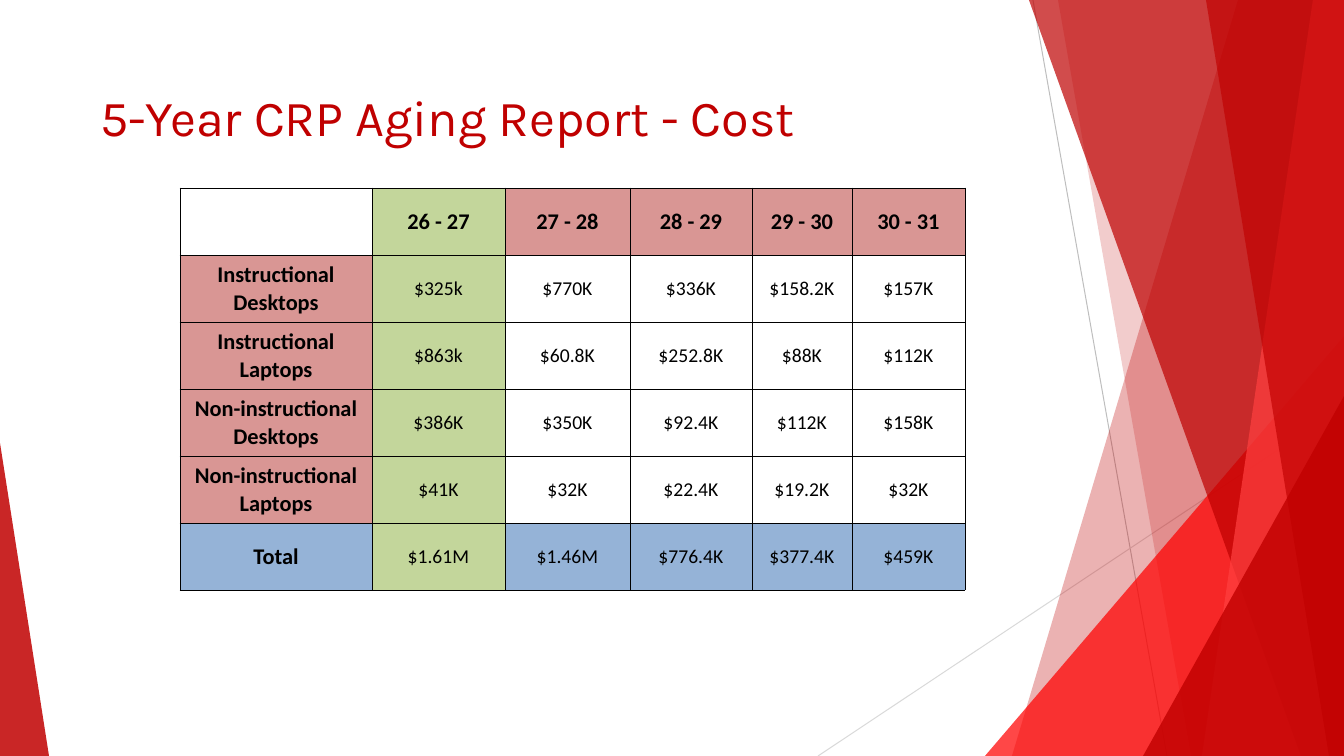
from lxml import etree
from pptx import Presentation
from pptx.dml.color import RGBColor
from pptx.enum.shapes import MSO_CONNECTOR
from pptx.enum.text import MSO_ANCHOR, PP_ALIGN
from pptx.oxml.ns import qn
from pptx.util import Pt

STRAIGHT = MSO_CONNECTOR.STRAIGHT
MIDDLE = MSO_ANCHOR.MIDDLE
CENTER = PP_ALIGN.CENTER

SCALE = 914400 / 100.8  # EMU per px
WIDTH, HEIGHT = 1344, 756

TITLE = "5-Year CRP Aging Report - Cost"
COSTS = [
    ["", "26 - 27", "27 - 28", "28 - 29", "29 - 30", "30 - 31"],
    ["Instructional Desktops", "$325k", "$770K", "$336K", "$158.2K", "$157K"],
    ["Instructional Laptops", "$863k", "$60.8K", "$252.8K", "$88K", "$112K"],
    ["Non-instructional Desktops", "$386K", "$350K", "$92.4K", "$112K", "$158K"],
    ["Non-instructional Laptops", "$41K", "$32K", "$22.4K", "$19.2K", "$32K"],
    ["Total", "$1.61M", "$1.46M", "$776.4K", "$377.4K", "$459K"],
]
TABLE_LEFT, TABLE_TOP = 180, 188
COLUMN_WIDTHS = [192, 133, 125, 122, 100, 113]
ROW_HEIGHT = 67

GREEN, PINK, BLUE = "C3D69B", "D99694", "95B3D7"
BLACK, DARK_RED = "000000", "C00000"

# start x, start y, end x, end y, colour
THIN_LINES = [
    (1033, 0, 1167, HEIGHT, "BEBEBE"),
    (WIDTH, 406, 818, HEIGHT, "D9D9D9"),
]
# corners, colour, opacity in percent
FACETS = [
    ([(WIDTH, 0), (1238, 0), (1012, HEIGHT), (WIDTH, HEIGHT)], DARK_RED, 30),
    ([(WIDTH, 0), (1058, 0), (1191, HEIGHT), (WIDTH, HEIGHT)], DARK_RED, 20),
    ([(WIDTH, 336), (985, HEIGHT), (WIDTH, HEIGHT)], "FF0000", 72),
    ([(WIDTH, 0), (1029, 0), (1301, HEIGHT), (WIDTH, HEIGHT)], "BE0000", 70),
    ([(WIDTH, 0), (1313, 0), (1202, HEIGHT), (WIDTH, HEIGHT)], "FF4040", 70),
    ([(WIDTH, 0), (1206, 0), (1329, HEIGHT), (WIDTH, HEIGHT)], DARK_RED, 65),
    ([(WIDTH, 396), (1143, HEIGHT), (WIDTH, HEIGHT)], DARK_RED, 80),
    ([(0, 443), (0, HEIGHT), (49, HEIGHT)], DARK_RED, 85),
]


def px(length):
    return round(length * SCALE)


def rgb(color):
    return RGBColor.from_string(color)


def set_font(font, name, size, color, bold=False):
    font.name, font.size, font.bold = name, Pt(size), bold
    font.color.rgb = rgb(color)


def add_thin_line(slide, x1, y1, x2, y2, color):
    line = slide.shapes.add_connector(STRAIGHT, px(x1), px(y1), px(x2), px(y2))
    line.line.color.rgb = rgb(color)
    line.line.width = Pt(0.72)
    etree.SubElement(line._element.spPr, qn("a:effectLst"))


def add_facet(slide, corners, color, opacity):
    builder = slide.shapes.build_freeform(*corners[0], scale=SCALE)
    builder.add_line_segments(corners[1:], close=True)
    facet = builder.convert_to_shape()
    facet.shadow.inherit = False
    facet.line.fill.background()
    facet.fill.solid()
    facet.fill.fore_color.rgb = rgb(color)
    color_element = facet._element.spPr.find(".//" + qn("a:srgbClr"))
    etree.SubElement(color_element, qn("a:alpha"), val=str(opacity * 1000))


def add_title(slide):
    box = slide.shapes.add_textbox(px(100), px(86), px(1144), px(63))
    frame = box.text_frame
    frame.word_wrap = True
    frame.margin_left = frame.margin_right = 0
    frame.margin_top = frame.margin_bottom = 0
    para = frame.paragraphs[0]
    para.text = TITLE
    set_font(para.font, "Karla", 36, DARK_RED)


def cell_color(row, column):
    """Fill by position: green first year, blue total, pink headings."""
    if row == column == 0:
        return None
    if column == 1:
        return GREEN
    if row == len(COSTS) - 1:
        return BLUE
    return PINK if row == 0 or column == 0 else None


def add_borders(cell):
    properties = cell._tc.get_or_add_tcPr()
    for side in ("lnL", "lnR", "lnT", "lnB"):
        border = etree.SubElement(properties, qn("a:" + side), w=str(Pt(0.5)))
        fill = etree.SubElement(border, qn("a:solidFill"))
        etree.SubElement(fill, qn("a:srgbClr"), val=BLACK)


def style_cell(cell, text, color, heading):
    add_borders(cell)
    if color:
        cell.fill.solid()
        cell.fill.fore_color.rgb = rgb(color)
    else:
        cell.fill.background()
    cell.vertical_anchor = MIDDLE
    cell.margin_left = cell.margin_right = cell.margin_top = px(1)
    cell.margin_bottom = 0
    para = cell.text_frame.paragraphs[0]
    para.text = text
    para.alignment = CENTER
    set_font(para.font, "Calibri", 16 if heading else 14, BLACK, heading)


def add_cost_table(slide):
    table = slide.shapes.add_table(
        len(COSTS), len(COLUMN_WIDTHS), px(TABLE_LEFT), px(TABLE_TOP),
        px(sum(COLUMN_WIDTHS)), px(ROW_HEIGHT * len(COSTS))).table
    table.first_row = table.horz_banding = False
    for column, width in zip(table.columns, COLUMN_WIDTHS):
        column.width = px(width)
    for r, texts in enumerate(COSTS):
        table.rows[r].height = px(ROW_HEIGHT)
        for c, text in enumerate(texts):
            style_cell(table.cell(r, c), text, cell_color(r, c), r == 0 or c == 0)


def main():
    deck = Presentation()
    deck.slide_width, deck.slide_height = px(WIDTH), px(HEIGHT)
    slide = deck.slides.add_slide(deck.slide_layouts[6])
    for thin_line in THIN_LINES:
        add_thin_line(slide, *thin_line)
    for facet in FACETS:
        add_facet(slide, *facet)
    add_title(slide)
    add_cost_table(slide)
    deck.save("out.pptx")


if __name__ == "__main__":
    main()
